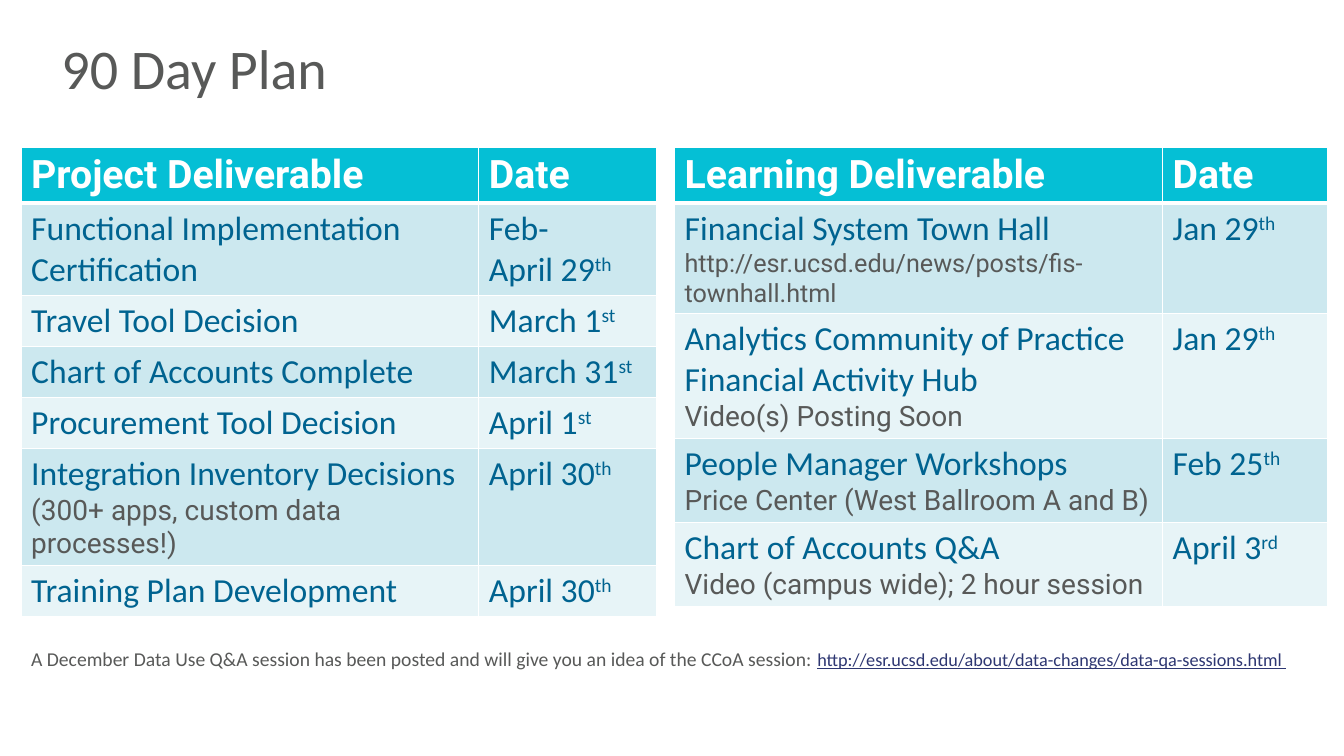
from dataclasses import dataclass

from lxml import etree
from pptx import Presentation
from pptx.dml.color import RGBColor
from pptx.enum import text
from pptx.oxml.ns import qn
from pptx.util import Pt

PX = 9144  # EMU per px, 100 px to the inch

WHITE = RGBColor(0xFF, 0xFF, 0xFF)
GREY = RGBColor(0x58, 0x59, 0x58)
BLUE = RGBColor(0x00, 0x63, 0x90)
NAVY = RGBColor(0x2E, 0x37, 0x72)
TEAL = RGBColor(0x05, 0xBF, 0xD5)
BANDS = (RGBColor(0xCC, 0xE8, 0xEF), RGBColor(0xE7, 0xF4, 0xF7))


@dataclass
class Deliverable:
    heading: str
    date: str
    height: int
    detail: str = ""
    detail_size: int = 20


@dataclass
class Plan:
    name: str
    left: int
    widths: tuple[int, int]
    rows: list[Deliverable]


TOP, HEADER_HEIGHT = 146, 54

PLANS = [
    Plan("Project Deliverable", 21, (454, 176), [
        Deliverable("Functional Implementation Certification", "Feb-\nApril 29th", 91),
        Deliverable("Travel Tool Decision", "March 1st", 50),
        Deliverable("Chart of Accounts Complete", "March 31st", 50),
        Deliverable("Procurement Tool Decision", "April 1st", 50),
        Deliverable("Integration Inventory Decisions", "April 30th", 116,
                    "(300+ apps, custom data processes!)"),
        Deliverable("Training Plan Development", "April 30th", 50),
    ]),
    Plan("Learning Deliverable", 669, (484, 164), [
        Deliverable("Financial System Town Hall", "Jan 29th", 109,
                    "http://esr.ucsd.edu/news/posts/fis-townhall.html", 18),
        Deliverable("Analytics Community of Practice\nFinancial Activity Hub",
                    "Jan 29th", 124, "Video(s) Posting Soon"),
        Deliverable("People Manager Workshops", "Feb 25th", 83,
                    "Price Center (West Ballroom A and B)"),
        Deliverable("Chart of Accounts Q&A", "April 3rd", 83,
                    "Video (campus wide); 2 hour session"),
    ]),
]


def add_run(p, words: str, *, size: int = 24, font: str = "Calibri",
            color: RGBColor = BLUE, bold: bool = False,
            underline: bool = False, raised: bool = False) -> None:
    r = p.add_run()
    r.text = words
    r.font.size = Pt(size)
    r.font.name = font
    r.font.color.rgb = color
    r.font.bold = bold
    r.font.underline = underline
    if raised:
        r.font._element.set("baseline", "30000")


def next_paragraph(tf):
    p = tf.paragraphs[-1]
    return tf.add_paragraph() if p.runs else p


def style_cell(cell, fill: RGBColor, bottom: int = 1, top: int = 1) -> None:
    cell.fill.solid()
    cell.fill.fore_color.rgb = fill
    tc_pr = cell._tc.get_or_add_tcPr()
    sides = {"a:lnL": 1, "a:lnR": 1, "a:lnT": top, "a:lnB": bottom}
    for i, (tag, width) in enumerate(sides.items()):
        ln = etree.Element(qn(tag), w=str(Pt(width)))
        solid = etree.SubElement(ln, qn("a:solidFill"))
        etree.SubElement(solid, qn("a:srgbClr"), val=str(WHITE))
        tc_pr.insert(i, ln)


def write_date(tf, date: str) -> None:
    *first_lines, last = date.split("\n")
    for line in first_lines:
        add_run(next_paragraph(tf), line)
    p = next_paragraph(tf)
    add_run(p, last[:-2])
    add_run(p, last[-2:], raised=True)


def add_plan(slide, plan: Plan) -> None:
    heights = [HEADER_HEIGHT] + [row.height for row in plan.rows]
    frame = slide.shapes.add_table(
        len(heights), 2, plan.left * PX, TOP * PX,
        sum(plan.widths) * PX, sum(heights) * PX)
    table = frame.table
    for column, width in zip(table.columns, plan.widths):
        column.width = width * PX
    for row, height in zip(table.rows, heights):
        row.height = height * PX

    # Header row
    for c, label in enumerate((plan.name, "Date")):
        cell = table.cell(0, c)
        style_cell(cell, TEAL, bottom=3)
        add_run(cell.text_frame.paragraphs[0], label, size=28,
                font="Roboto", color=WHITE, bold=True)

    # Deliverables
    for n, item in enumerate(plan.rows):
        name_cell, date_cell = table.cell(n + 1, 0), table.cell(n + 1, 1)
        for cell in (name_cell, date_cell):
            style_cell(cell, BANDS[n % 2], top=1 if n else 3)
        for line in item.heading.split("\n"):
            add_run(next_paragraph(name_cell.text_frame), line)
        if item.detail:
            add_run(next_paragraph(name_cell.text_frame), item.detail,
                    size=item.detail_size, font="Roboto", color=GREY)
        write_date(date_cell.text_frame, item.date)


def add_title(slide, words: str) -> None:
    sp = slide.shapes.title
    sp.left, sp.top, sp.width, sp.height = (v * PX for v in (51, 36, 1235, 82))
    tf = sp.text_frame
    tf.auto_size = text.MSO_AUTO_SIZE.NONE
    tf.vertical_anchor = text.MSO_ANCHOR.TOP
    p = tf.paragraphs[0]
    p.alignment = text.PP_ALIGN.LEFT
    p.line_spacing = 0.9
    add_run(p, words, size=40, color=GREY)


def add_footnote(slide) -> None:
    sp = slide.shapes.add_textbox(*(v * PX for v in (21, 637, 1275, 34)))
    tf = sp.text_frame
    tf.word_wrap = True
    p = tf.paragraphs[0]
    add_run(p, "A December Data Use Q&A session has been posted and will "
               "give you an idea of the CCoA session: ", size=14, color=GREY)
    add_run(p, "http://esr.ucsd.edu/about/data-changes/data-qa-sessions.html ",
            size=13, color=NAVY, underline=True)


def main() -> None:
    prs = Presentation()
    prs.slide_width, prs.slide_height = 1333 * PX, 750 * PX
    slide = prs.slides.add_slide(prs.slide_layouts.get_by_name("Title Only"))
    add_title(slide, "90 Day Plan")
    for plan in PLANS:
        add_plan(slide, plan)
    add_footnote(slide)
    prs.save("out.pptx")


if __name__ == "__main__":
    main()
